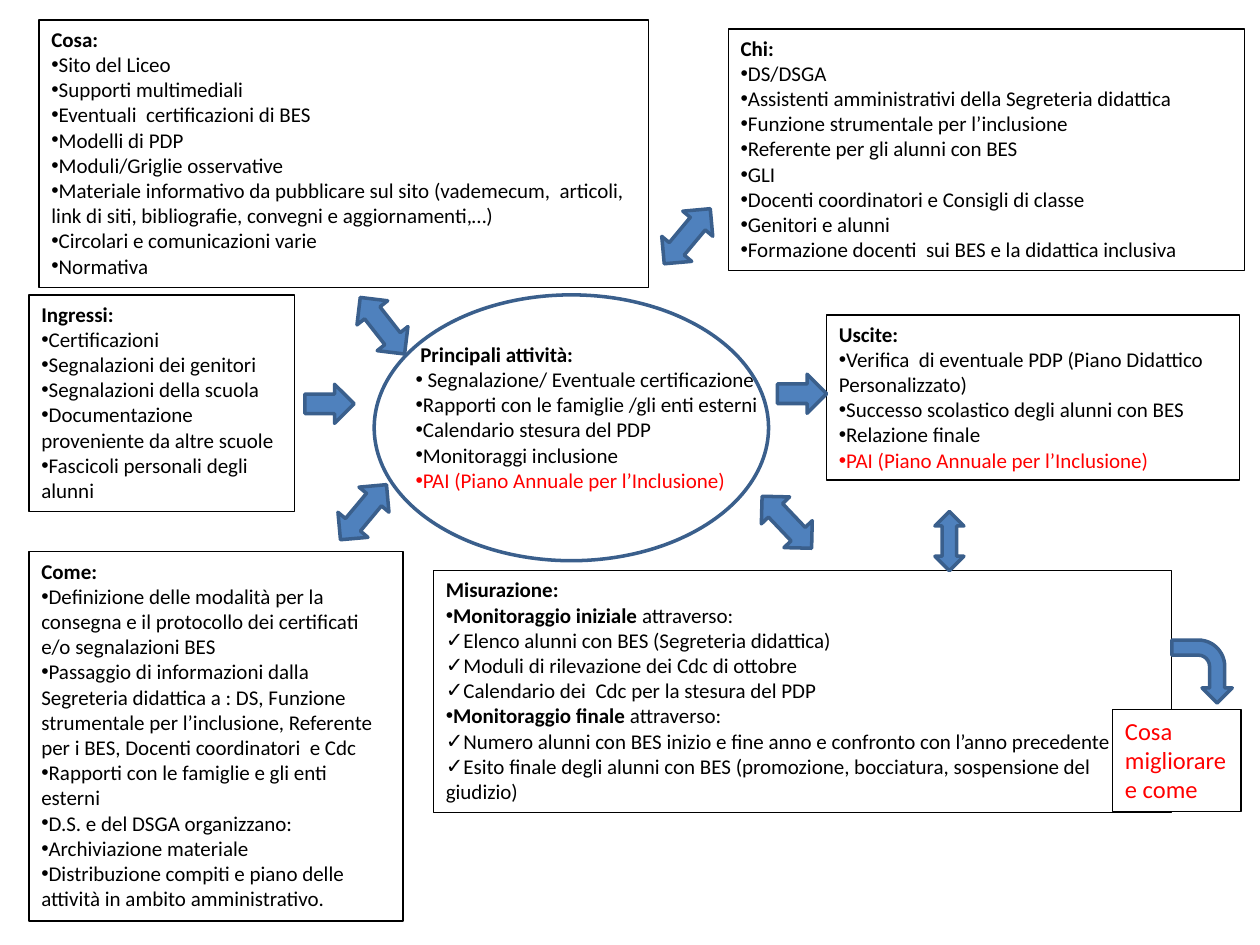
from dataclasses import dataclass
from lxml.etree import SubElement
from pptx import Presentation
from pptx.dml.color import RGBColor
from pptx.enum.shapes import MSO_SHAPE as Shape
from pptx.enum.text import MSO_AUTO_SIZE as Fit
from pptx.oxml.ns import qn
from pptx.util import Inches, Pt

BLACK, RED, WHITE = "000000", "FF0000", "FFFFFF"
BLUE, NAVY = "4F81BD", "3A5F8C"


@dataclass
class Item:
    text: str
    lead: str = ""
    mark: str = "•"
    color: str = BLACK


PAI = Item("PAI (Piano Annuale per l’Inclusione)", color=RED)

CARDS = [
    ((0.31, 0.16, 4.84, 2.12), "Cosa:", [
        Item("Sito del Liceo"),
        Item("Supporti multimediali"),
        Item("Eventuali  certificazioni di BES"),
        Item("Modelli di PDP"),
        Item("Moduli/Griglie osservative"),
        Item("Materiale informativo da pubblicare sul sito (vademecum,  articoli, "
             "link di siti, bibliografie, convegni e aggiornamenti,…)"),
        Item("Circolari e comunicazioni varie"),
        Item("Normativa"),
    ]),
    ((5.78, 0.23, 4.1, 1.92), "Chi:", [
        Item("DS/DSGA"),
        Item("Assistenti amministrativi della Segreteria didattica"),
        Item("Funzione strumentale per l’inclusione"),
        Item("Referente per gli alunni con BES"),
        Item("GLI"),
        Item("Docenti coordinatori e Consigli di classe"),
        Item("Genitori e alunni"),
        Item("Formazione docenti  sui BES e la didattica inclusiva"),
    ]),
    ((0.23, 2.34, 2.11, 1.72), "Ingressi:", [
        Item("Certificazioni"),
        Item("Segnalazioni dei genitori"),
        Item("Segnalazioni della scuola"),
        Item("Documentazione proveniente da altre scuole"),
        Item("Fascicoli personali degli alunni"),
    ]),
    ((6.56, 2.5, 3.28, 1.31), "Uscite:", [
        Item("Verifica  di eventuale PDP (Piano Didattico Personalizzato)"),
        Item("Successo scolastico degli alunni con BES"),
        Item("Relazione finale"),
        PAI,
    ]),
    ((0.23, 4.38, 2.97, 2.93), "Come:", [
        Item("Definizione delle modalità per la consegna e il protocollo dei "
             "certificati e/o segnalazioni BES"),
        Item("Passaggio di informazioni dalla Segreteria didattica a : DS, Funzione "
             "strumentale per l’inclusione, Referente per i BES, Docenti "
             "coordinatori  e Cdc"),
        Item("Rapporti con le famiglie e gli enti esterni"),
        Item("D.S. e del DSGA organizzano:"),
        Item("Archiviazione materiale"),
        Item("Distribuzione compiti e piano delle attività in ambito amministrativo."),
    ]),
    ((3.44, 4.53, 5.86, 1.92), "Misurazione:", [
        Item("attraverso:", lead="Monitoraggio iniziale "),
        Item("Elenco alunni con BES (Segreteria didattica)", mark="✓"),
        Item("Moduli di rilevazione dei Cdc di ottobre", mark="✓"),
        Item("Calendario dei  Cdc per la stesura del PDP", mark="✓"),
        Item("attraverso:", lead="Monitoraggio finale "),
        Item("Numero alunni con BES inizio e fine anno e confronto con l’anno "
             "precedente", mark="✓"),
        Item("Esito finale degli alunni con BES (promozione, bocciatura, "
             "sospensione del giudizio)", mark="✓"),
    ]),
]

CORE = [
    Item(" Segnalazione/ Eventuale certificazione"),
    Item("Rapporti con le famiglie /gli enti esterni"),
    Item("Calendario stesura del PDP"),
    Item("Monitoraggi inclusione"),
    PAI,
]

ARROWS = [
    (Shape.RIGHT_ARROW, (2.42, 3.05, 0.39, 0.31), 0),
    (Shape.RIGHT_ARROW, (6.17, 2.97, 0.39, 0.31), 0),
    (Shape.LEFT_RIGHT_ARROW, (2.6, 3.91, 0.57, 0.31), 309.9),
    (Shape.LEFT_RIGHT_ARROW, (5.96, 3.99, 0.57, 0.31), 46.4),
    (Shape.LEFT_RIGHT_ARROW, (7.3, 4.18, 0.47, 0.23), 90),
    (Shape.LEFT_RIGHT_ARROW, (2.75, 2.43, 0.57, 0.31), 231.9),
    (Shape.LEFT_RIGHT_ARROW, (5.17, 1.72, 0.57, 0.31), 309.9),
    (Shape.BENT_ARROW, (9.29, 5.09, 0.5, 0.48), 90),
]


def place(area):
    return [Inches(n) for n in area]


def paint(fill, color):
    fill.solid()
    fill.fore_color.rgb = RGBColor.from_string(color)


def edge(shape, color, width):
    paint(shape.line.fill, color)
    shape.line.width = Pt(width)


def write(para, text, color=BLACK, size=12, bold=False):
    run = para.add_run()
    run.text = text
    font = run.font
    font.name, font.size, font.bold = "Calibri", Pt(size), bold
    paint(font.fill, color)


def add_mark(para, mark):
    props = para._p.get_or_add_pPr()
    if mark == "•":
        SubElement(props, qn("a:buFont"), typeface="Arial")
    SubElement(props, qn("a:buChar"), char=mark)


def add_box(slide, area):
    box = slide.shapes.add_textbox(*place(area))
    box.text_frame.word_wrap = True
    box.text_frame.auto_size = Fit.SHAPE_TO_FIT_TEXT
    return box


def add_list(slide, area, head, items):
    box = add_box(slide, area)
    frame = box.text_frame
    write(frame.paragraphs[0], head, bold=True)
    for item in items:
        para = frame.add_paragraph()
        add_mark(para, item.mark)
        if item.lead:
            write(para, item.lead, bold=True)
        write(para, item.text, item.color)
    return box


def add_card(slide, area, head, items):
    edge(add_list(slide, area, head, items), BLACK, 0.75)


def add_form(slide, kind, area, turn=0):
    form = slide.shapes.add_shape(kind, *place(area))
    form.shadow.inherit = False
    form.rotation = turn
    edge(form, NAVY, 2)
    return form


def add_arrow(slide, kind, area, turn):
    paint(add_form(slide, kind, area, turn).fill, BLUE)


def add_note(slide, area, text):
    box = add_box(slide, area)
    paint(box.fill, WHITE)
    edge(box, BLACK, 0.75)
    write(box.text_frame.paragraphs[0], text, RED, 14)


def main():
    deck = Presentation()
    deck.slide_width, deck.slide_height = Inches(10), Inches(7.5)
    slide = deck.slides.add_slide(deck.slide_layouts[6])
    for card in CARDS:
        add_card(slide, *card)
    add_form(slide, Shape.OVAL, (2.97, 2.34, 3.13, 2.11)).fill.background()
    add_list(slide, (3.2, 2.66, 3.05, 1.31), " Principali attività:", CORE)
    for arrow in ARROWS:
        add_arrow(slide, *arrow)
    add_note(slide, (8.83, 5.63, 1.02, 0.81), "Cosa migliorare e come")
    deck.save("out.pptx")


if __name__ == "__main__":
    main()
